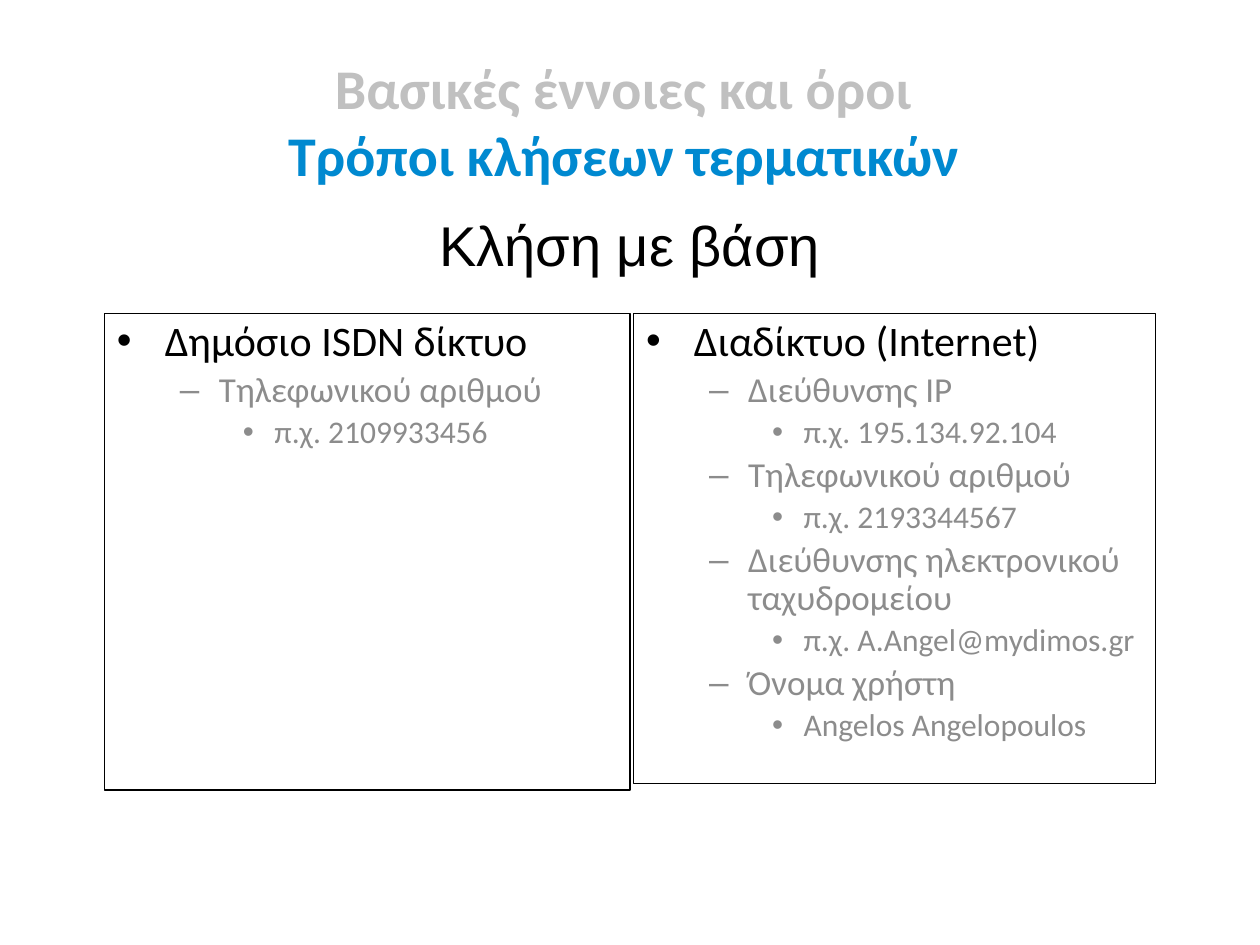
import dataclasses

import lxml.etree
import pptx
import pptx.dml.color
import pptx.enum.shapes
import pptx.enum.text
import pptx.oxml.ns
import pptx.util

Inches = pptx.util.Inches
Pt = pptx.util.Pt


@dataclasses.dataclass(frozen=True)
class Level:
    """Type size, colour and bullet of one outline level."""
    size: int
    color: str
    bullet: str
    margin: float
    hanging: float


@dataclasses.dataclass(frozen=True)
class Theme:
    """Colours, fonts and sizes of the slide."""
    black: str = "000000"
    topic: str = "C0C0C0"
    accent: str = "0089D0"
    body_font: str = "Calibri"
    subtitle_font: str = "Arial"
    heading: int = 32
    border: float = 0.75
    levels: tuple = (
        Level(24, "000000", "•", 0.38, 0.38),
        Level(20, "8C8C8C", "–", 0.81, 0.31),
        Level(18, "8C8C8C", "•", 1.25, 0.25),
    )


THEME = Theme()

TITLE = (("Βασικές έννοιες και όροι ", THEME.topic),
         ("Tρόποι κλήσεων τερματικών ", THEME.accent))
ISDN = ((0, "Δημόσιο ISDN δίκτυο"),
        (1, "Τηλεφωνικού αριθμού"),
        (2, "π.χ. 2109933456"))
INTERNET = ((0, "Διαδίκτυο (Internet)"),
            (1, "Διεύθυνσης IP"),
            (2, "π.χ. 195.134.92.104"),
            (1, "Τηλεφωνικού αριθμού"),
            (2, "π.χ. 2193344567"),
            (1, "Διεύθυνσης ηλεκτρονικού ταχυδρομείου"),
            (2, "π.χ. A.Angel@mydimos.gr"),
            (1, "Όνομα χρήστη"),
            (2, "Angelos Angelopoulos "))


def format_runs(para, font, size, color, bold=False):
    """Give every run of a paragraph the same look."""
    for span in para.runs:
        span.font.name = font
        span.font.size = Pt(size)
        span.font.bold = bold
        span.font.color.rgb = pptx.dml.color.RGBColor.from_string(color)


def add_heading(page, area, lines, font, bold=False):
    """Place centred heading lines, each in its own colour."""
    box = page.shapes.add_textbox(*map(Inches, area))
    frame = box.text_frame
    frame.word_wrap = True
    frame.vertical_anchor = pptx.enum.text.MSO_ANCHOR.MIDDLE
    frame.text = "\n".join(text for text, color in lines)
    for para, (text, color) in zip(frame.paragraphs, lines):
        para.alignment = pptx.enum.text.PP_ALIGN.CENTER
        format_runs(para, font, THEME.heading, color, bold)


def set_bullet(para, level):
    """Give a paragraph a hanging bullet."""
    properties = para._p.get_or_add_pPr()
    properties.set("marL", str(Inches(level.margin)))
    properties.set("indent", str(-Inches(level.hanging)))
    for tag, key, value in (("a:buFont", "typeface", "Arial"),
                            ("a:buChar", "char", level.bullet)):
        element = lxml.etree.SubElement(properties, pptx.oxml.ns.qn(tag))
        element.set(key, value)


def add_outline(page, area, items):
    """Place a bordered box with a bulleted outline."""
    box = page.shapes.add_shape(
        pptx.enum.shapes.MSO_SHAPE.RECTANGLE, *map(Inches, area))
    box.shadow.inherit = False
    box.fill.background()
    box.line.color.rgb = pptx.dml.color.RGBColor.from_string(THEME.black)
    box.line.width = Pt(THEME.border)
    frame = box.text_frame
    frame.word_wrap = True
    frame.vertical_anchor = pptx.enum.text.MSO_ANCHOR.TOP
    frame.text = "\n".join(text for depth, text in items)
    for para, (depth, text) in zip(frame.paragraphs, items):
        level = THEME.levels[depth]
        para.level = depth
        para.alignment = pptx.enum.text.PP_ALIGN.LEFT
        para.line_spacing = 0.9
        para.space_before = Pt(0.2 * level.size)
        set_bullet(para, level)
        format_runs(para, THEME.body_font, level.size, level.color)


def main():
    """Build the slide and save it."""
    deck = pptx.Presentation()
    deck.slide_width, deck.slide_height = Inches(10), Inches(7.5)
    page = deck.slides.add_slide(deck.slide_layouts[6])
    add_heading(page, (0.75, 0.15, 8.5, 1.61), TITLE, THEME.body_font, True)
    add_outline(page, (0.83, 2.49, 4.17, 3.78), ISDN)
    add_outline(page, (5.03, 2.49, 4.14, 3.73), INTERNET)
    add_heading(page, (0, 1.62, 10, 0.63),
                (("Κλήση με βάση", THEME.black),), THEME.subtitle_font)
    deck.save("out.pptx")


if __name__ == "__main__":
    main()
